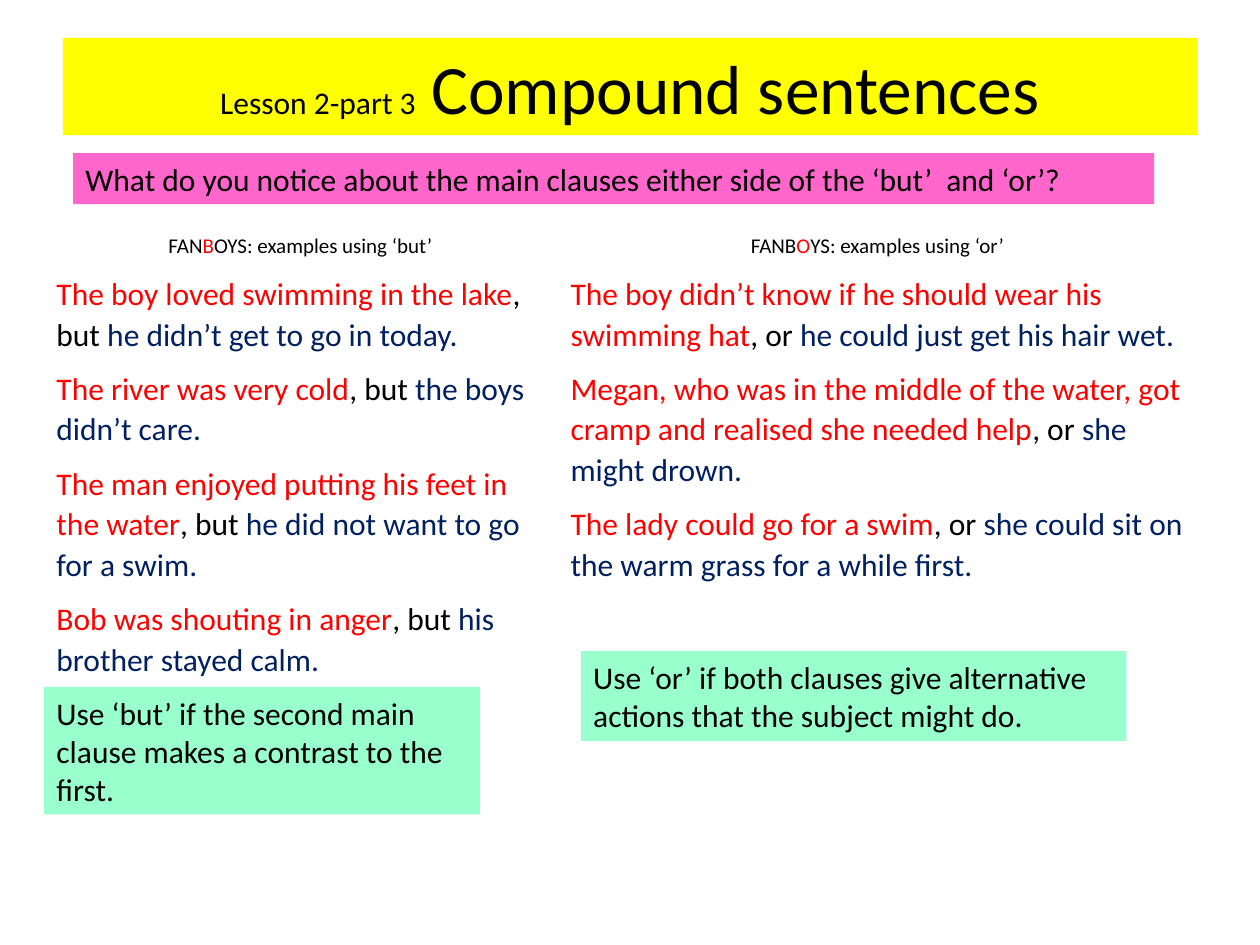
"""Build a slide on compound sentences joined by 'but' and 'or'."""
from dataclasses import dataclass

from pptx import Presentation
from pptx.dml.color import RGBColor
from pptx.enum.shapes import MSO_SHAPE
from pptx.enum.text import MSO_ANCHOR, PP_ALIGN
from pptx.util import Inches, Pt

RECT = MSO_SHAPE.RECTANGLE
MIDDLE = MSO_ANCHOR.MIDDLE
LEFT, CENTER = PP_ALIGN.LEFT, PP_ALIGN.CENTER
BLACK = RGBColor(0x00, 0x00, 0x00)
RED = RGBColor(0xFF, 0x00, 0x00)
NAVY = RGBColor(0x00, 0x20, 0x60)
YELLOW = RGBColor(0xFF, 0xFF, 0x00)
PINK = RGBColor(0xFF, 0x66, 0xCC)
MINT = RGBColor(0x99, 0xFF, 0xCC)
FONT = "Calibri"
WIDTH, HEIGHT = Inches(10), Inches(7.5)
BODY, SMALL, LARGE = 18, 12, 39.6


@dataclass
class Box:
    """Place on the slide, in percent of its width and height."""
    x: float
    y: float
    w: float
    h: float

    def emu(self) -> tuple[int, int, int, int]:
        """Return left, top, width and height in EMU."""
        return (int(WIDTH * self.x / 100), int(HEIGHT * self.y / 100),
                int(WIDTH * self.w / 100), int(HEIGHT * self.h / 100))


@dataclass
class Run:
    """Text with one colour and, where it differs, its own size."""
    text: str
    color: RGBColor = BLACK
    size: float | None = None


@dataclass
class Banner:
    """Filled rectangle with one paragraph."""
    box: Box
    fill: RGBColor
    runs: list[Run]
    align: PP_ALIGN = LEFT


@dataclass
class Column:
    """Heading and sentences that share one conjunction."""
    box: Box
    heading: tuple[str, str, str]
    conjunction: str
    clauses: list[tuple[str, str]]


BANNERS = [
    Banner(Box(5, 4, 90, 10.3), YELLOW,
           [Run("Lesson 2-part 3"), Run(" Compound sentences", size=LARGE)], CENTER),
    Banner(Box(5.8, 16.2, 85.8, 5.4), PINK,
           [Run("What do you notice about the main clauses either side of "
                "the ‘but’  and ‘or’?")]),
    Banner(Box(3.5, 72.7, 34.6, 13.5), MINT,
           [Run("Use ‘but’ if the second main clause makes a contrast to the first.")]),
    Banner(Box(46.1, 68.9, 43.3, 9.5), MINT,
           [Run("Use ‘or’ if both clauses give alternative actions that the "
                "subject might do.")]),
]
COLUMNS = [
    Column(Box(3.5, 23.75, 40.7, 49), ("FAN", "B", "OYS"), "but", [
        ("The boy loved swimming in the lake", "he didn’t get to go in today."),
        ("The river was very cold", "the boys didn’t care."),
        ("The man enjoyed putting his feet in the water",
         "he did not want to go for a swim."),
        ("Bob was shouting in anger", "his brother stayed calm."),
    ]),
    Column(Box(44.3, 23.75, 50.7, 38.8), ("FANB", "O", "YS"), "or", [
        ("The boy didn’t know if he should wear his swimming hat",
         "he could just get his hair wet."),
        ("Megan, who was in the middle of the water, got cramp and realised "
         "she needed help", "she might drown."),
        ("The lady could go for a swim",
         "she could sit on the warm grass for a while first."),
    ]),
]


def write(p, runs: list[Run], size: float, align: PP_ALIGN = LEFT) -> None:
    """Fill a paragraph with coloured runs."""
    p.alignment = align
    p.font.name, p.font.size = FONT, Pt(size)
    for run in runs:
        r = p.add_run()
        r.text = run.text
        r.font.color.rgb = run.color
        if run.size:
            r.font.size = Pt(run.size)


def add_banner(s, banner: Banner) -> None:
    """Draw a filled rectangle with its text."""
    sp = s.shapes.add_shape(RECT, *banner.box.emu())
    sp.shadow.inherit = False
    sp.fill.solid()
    sp.fill.fore_color.rgb = banner.fill
    sp.line.fill.background()
    tf = sp.text_frame
    tf.word_wrap = True
    tf.vertical_anchor = MIDDLE
    write(tf.paragraphs[0], banner.runs, BODY, banner.align)


def add_column(s, column: Column) -> None:
    """Draw a heading with its example sentences."""
    tf = s.shapes.add_textbox(*column.box.emu()).text_frame
    tf.word_wrap = True
    before, letter, after = column.heading
    write(tf.paragraphs[0],
          [Run(before), Run(letter, RED),
           Run(f"{after}: examples using ‘{column.conjunction}’")], SMALL, CENTER)
    for first, second in column.clauses:
        write(tf.add_paragraph(),
              [Run(first, RED), Run(f", {column.conjunction} "), Run(second, NAVY)], BODY)
    for p in tf.paragraphs:
        p.line_spacing = 1.07
        p.space_after = Pt(8)


def main() -> None:
    """Build and save the slide."""
    prs = Presentation()
    prs.slide_width, prs.slide_height = WIDTH, HEIGHT
    s = prs.slides.add_slide(prs.slide_layouts[6])
    for banner in BANNERS:
        add_banner(s, banner)
    for column in COLUMNS:
        add_column(s, column)
    prs.save("out.pptx")


if __name__ == "__main__":
    main()
